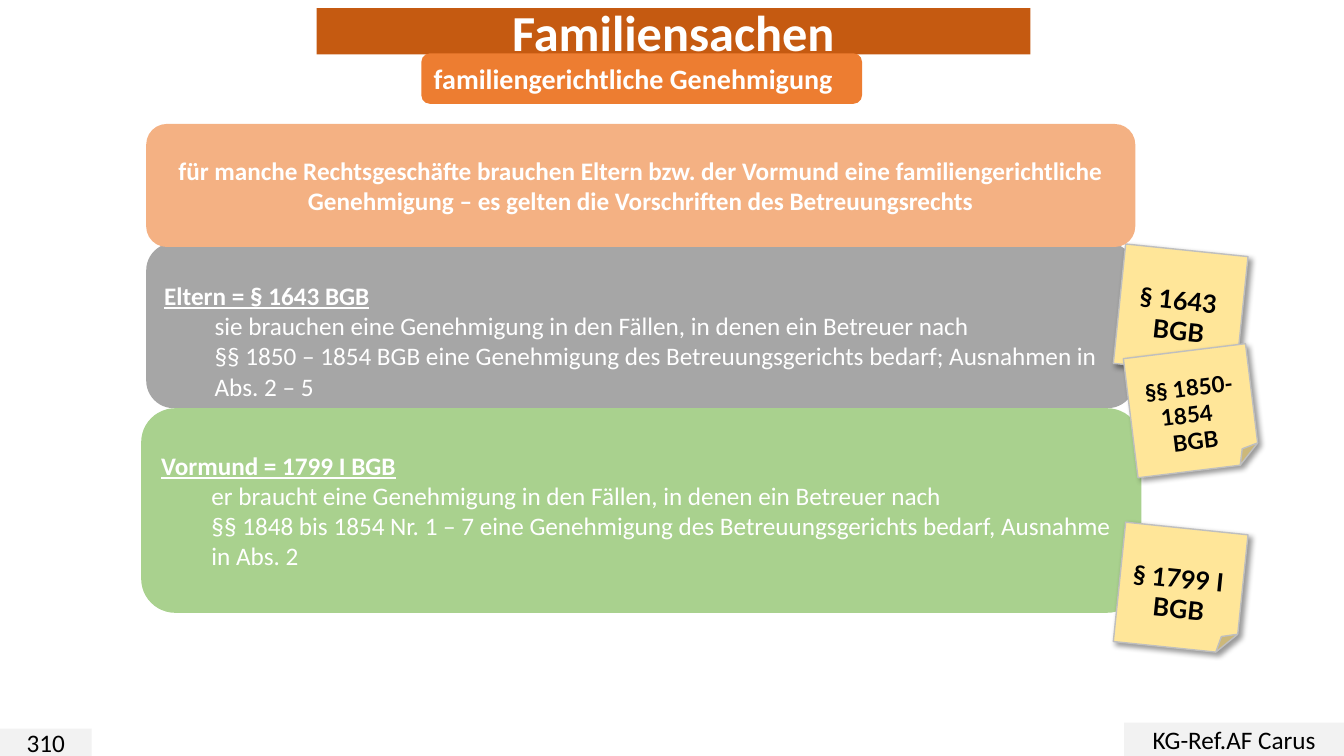
from lxml import etree
from pptx import Presentation, util as u
from pptx.dml.color import RGBColor
from pptx.enum import shapes, text
from pptx.oxml import parse_xml
from pptx.oxml.ns import qn

NS = 'xmlns:a="http://schemas.openxmlformats.org/drawingml/2006/main"'
WIDE, HIGH = 13.33, 7.5
HUES = {"rust": "C55A11", "orange": "ED7D31", "peach": "F4B183",
        "grey": "A6A6A6", "green": "A9D18E", "pale": "F2F2F2",
        "note": "FFE699", "edge": "BFBFBF", "white": "FFFFFF", "black": "000000"}

TITLE = "Familiensachen"
TOPIC = "familiengerichtliche Genehmigung"
INTRO = ("für manche Rechtsgeschäfte brauchen Eltern bzw. der Vormund eine "
         "familiengerichtliche Genehmigung – es gelten die Vorschriften des Betreuungsrechts")
ELTERN = ["Eltern = § 1643 BGB",
          "sie brauchen eine Genehmigung in den Fällen, in denen ein Betreuer nach \n"
          "§§ 1850 – 1854 BGB eine Genehmigung des Betreuungsgerichts bedarf; "
          "Ausnahmen in Abs. 2 – 5"]
VORMUND = ["Vormund = 1799 I BGB",
           "er braucht eine Genehmigung in den Fällen, in denen ein Betreuer nach \n"
           "§§ 1848 bis 1854 Nr. 1 – 7 eine Genehmigung des Betreuungsgerichts bedarf, "
           "Ausnahme in Abs. 2"]
NOTES = {"eltern": ("§ 1643 ", 11.1, 2.48, 5.9, 18),
         "range": ("§§ 1850-1854  ", 11.21, 3.48, -7, 16),
         "vormund": ("§ 1799 I ", 11.1, 5.24, 5.9, 18)}
FOOT = [("310", 0, 0.91, 0.27), ("KG-Ref.AF Carus", WIDE - 2.18, 2.18, 0.33)]
MID, LEFT = text.PP_ALIGN.CENTER, text.PP_ALIGN.LEFT
ROUND = shapes.MSO_SHAPE.ROUNDED_RECTANGLE

deck = Presentation()
deck.slide_width, deck.slide_height = u.Inches(WIDE), u.Inches(HIGH)
slide = deck.slides.add_slide(deck.slide_layouts[5])


def color(name):
    return RGBColor.from_string(HUES[name])


def write(shape, lines, size, hue="white", bold=True, align=MID, font="Calibri"):
    frame = shape.text_frame
    frame.text = lines[0]
    for line in lines[1:]:
        frame.add_paragraph().text = line
    frame.word_wrap = True
    frame.auto_size = text.MSO_AUTO_SIZE.NONE
    frame.vertical_anchor = text.MSO_ANCHOR.MIDDLE
    for para in frame.paragraphs:
        para.alignment = align
        para.line_spacing = 1.0
        for run in para.runs:
            run.font.size, run.font.name = u.Pt(size), font
            run.font.bold = bold
            run.font.color.rgb = color(hue)


def box(kind, spot, hue):
    shape = slide.shapes.add_shape(kind, *(u.Inches(n) for n in spot))
    shape.shadow.inherit = False
    shape.fill.solid()
    shape.fill.fore_color.rgb = color(hue)
    shape.line.fill.background()
    return shape


def panel(spot, hue, lines, drop=0):
    shape = box(ROUND, spot, hue)
    write(shape, lines, 18, align=LEFT)
    head, body = shape.text_frame.paragraphs
    head.runs[0].font.underline = True
    body.level = 1
    props = body._p.get_or_add_pPr()
    props.set("marL", str(u.Inches(0.5)))
    props.set("indent", "0")
    for run in body.runs:
        run.font.bold = False
    shape.text_frame.margin_top = u.Inches(0.05 + drop)


def sticky(label, left, top, turn, size):
    shape = box(shapes.MSO_SHAPE.FOLDED_CORNER, (left, top, 1.22, 1.19), "note")
    shape.rotation = turn
    shape.line.color.rgb = color("edge")
    shape.line.width = u.Pt(1)
    write(shape, [label, "BGB"], size, "black", font="Lato")
    shape.text_frame.margin_top = u.Inches(0.05) + u.Pt(size * 1.2)
    shade = etree.SubElement(shape._element.spPr.find(qn("a:effectLst")), qn("a:outerShdw"),
                             blurRad=str(u.Pt(4)), dist=str(u.Pt(3)), dir="2700000",
                             algn="tl", rotWithShape="0")
    tint = etree.SubElement(shade, qn("a:srgbClr"), val=HUES["black"])
    etree.SubElement(tint, qn("a:alpha"), val="40000")


title = slide.shapes.title
title.left, title.top, title.width, title.height = (u.Inches(n) for n in (3.14, 0.08, 7.08, 0.46))
title._element.spPr.append(parse_xml(f'<a:prstGeom {NS} prst="roundRect"><a:avLst/></a:prstGeom>'))
title.fill.solid()
title.fill.fore_color.rgb = color("rust")
write(title, [TITLE], 36)

for label, left, width, height in FOOT:
    tag = box(shapes.MSO_SHAPE.RECTANGLE, (left, HIGH - height, width, height), "pale")
    write(tag, [label], 18, "black", False)

write(box(ROUND, (4.18, 0.53, 4.37, 0.5), "orange"), [TOPIC], 20, align=LEFT)
panel((1.45, 2.41, 9.81, 1.64), "grey", ELTERN, 0.3)
sticky(*NOTES["eltern"])
panel((1.4, 4.05, 9.92, 2.03), "green", VORMUND)
sticky(*NOTES["range"])
write(box(ROUND, (1.45, 1.23, 9.81, 1.22), "peach"), [INTRO], 18)
sticky(*NOTES["vormund"])

deck.save("out.pptx")
